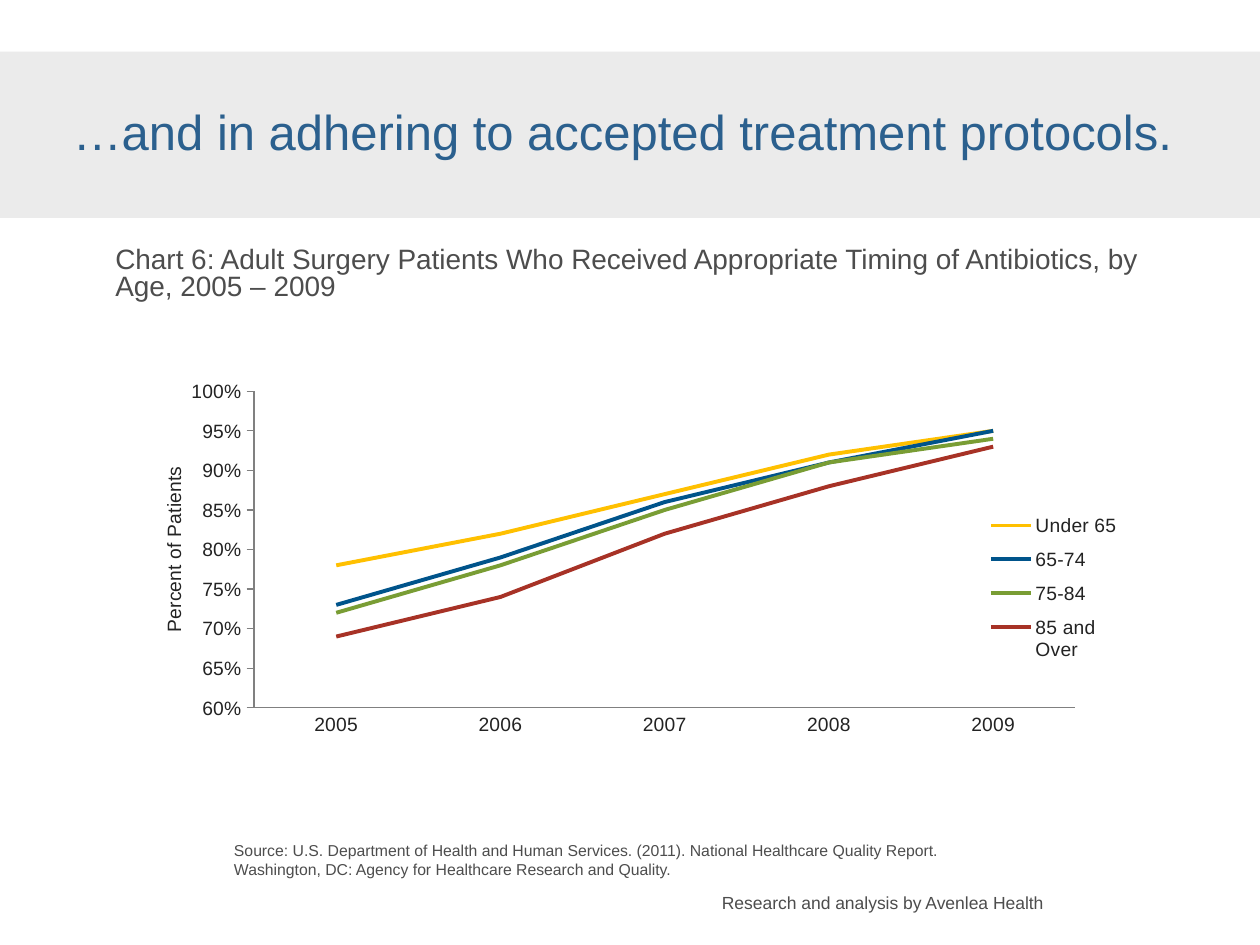
"""Build a slide with a line chart of antibiotic timing by patient age."""
from lxml.etree import SubElement
from pptx import Presentation
from pptx.chart.data import CategoryChartData
from pptx.dml.color import RGBColor
from pptx.enum.chart import XL_CHART_TYPE as ChartType
from pptx.enum.chart import XL_LEGEND_POSITION as LegendPosition
from pptx.enum.chart import XL_TICK_MARK as TickMark
from pptx.enum.shapes import MSO_SHAPE as Shape
from pptx.enum.text import MSO_ANCHOR as Anchor
from pptx.enum.text import PP_ALIGN as Align
from pptx.oxml.ns import qn
from pptx.util import Pt

FONT = "Arial"
BAND = RGBColor(0xEB, 0xEB, 0xEB)
TITLE_BLUE = RGBColor(0x2B, 0x60, 0x8E)
TEXT_GREY = RGBColor(0x4D, 0x4D, 0x4D)
CHART_TEXT = RGBColor(0x23, 0x23, 0x23)
AXIS_GREY = RGBColor(0x80, 0x80, 0x80)
YELLOW = RGBColor(0xFF, 0xC0, 0x00)
BLUE = RGBColor(0x00, 0x54, 0x8B)
GREEN = RGBColor(0x79, 0x9D, 0x34)
RED = RGBColor(0xA7, 0x32, 0x26)

YEARS = ["2005", "2006", "2007", "2008", "2009"]
SHARE_BY_AGE = [
    ("Under 65", YELLOW, [0.78, 0.82, 0.87, 0.92, 0.95]),
    ("65-74", BLUE, [0.73, 0.79, 0.86, 0.91, 0.95]),
    ("75-84", GREEN, [0.72, 0.78, 0.85, 0.91, 0.94]),
    ("85 and Over", RED, [0.69, 0.74, 0.82, 0.88, 0.93]),
]


def set_font(font, size, color):
    """Apply the slide's typeface with a size and colour."""
    font.name = FONT
    font.size = Pt(size)
    font.bold = False
    font.color.rgb = color


def fill_text(shape, text, size, color, line_spacing=1.0):
    """Write one left-aligned paragraph without insets."""
    frame = shape.text_frame
    frame.margin_left = frame.margin_right = 0
    frame.margin_top = frame.margin_bottom = 0
    frame.word_wrap = True
    frame.vertical_anchor = Anchor.TOP
    frame.text = text
    paragraph = frame.paragraphs[0]
    paragraph.alignment = Align.LEFT
    paragraph.line_spacing = line_spacing
    set_font(paragraph.runs[0].font, size, color)


def add_band(slide, top, width, height):
    """Add the grey band behind the title."""
    band = slide.shapes.add_shape(Shape.RECTANGLE, 0, Pt(top), width, Pt(height))
    band.shadow.inherit = False
    band.fill.solid()
    band.fill.fore_color.rgb = BAND
    band.line.fill.background()


def set_title(slide, text):
    """Move and format the title placeholder."""
    title = slide.shapes.title
    title.left, title.top = Pt(41.6), Pt(64.4)
    title.width, title.height = Pt(648), Pt(27.4)
    fill_text(title, text, 28, TITLE_BLUE, 0.8)


def add_text(slide, box, text, size, line_spacing=1.0):
    """Add a grey text box at left, top, width, height."""
    shape = slide.shapes.add_textbox(*map(Pt, box))
    fill_text(shape, text, size, TEXT_GREY, line_spacing)


def place(element, index, **position):
    """Give a chart part a manual layout in fractions of the chart."""
    for layout in element.findall(qn("c:layout")):
        element.remove(layout)
    layout = element.makeelement(qn("c:layout"))
    element.insert(index, layout)
    manual = SubElement(layout, qn("c:manualLayout"))
    settings = {"xMode": "edge", "yMode": "edge", **position}
    for name, value in settings.items():
        SubElement(manual, qn(f"c:{name}")).set("val", str(value))


def format_axis(axis, tick_mark):
    """Style an axis line, its ticks and its labels."""
    axis.has_major_gridlines = False
    axis.major_tick_mark = tick_mark
    axis.minor_tick_mark = TickMark.NONE
    axis.format.line.color.rgb = AXIS_GREY
    axis.format.line.width = Pt(0.75)
    set_font(axis.tick_labels.font, 11, CHART_TEXT)


def format_value_axis(axis):
    """Set the percent scale and the rotated axis title."""
    format_axis(axis, TickMark.OUTSIDE)
    axis.minimum_scale, axis.maximum_scale = 0.6, 1
    axis.major_unit = 0.05
    axis.tick_labels.number_format = "0%"
    axis.tick_labels.number_format_is_linked = False
    frame = axis.axis_title.text_frame
    frame.text = "Percent of Patients"
    set_font(frame.paragraphs[0].runs[0].font, 11, CHART_TEXT)


def add_line_chart(slide, box):
    """Add the line chart with one line per age group."""
    data = CategoryChartData(number_format="0%")
    data.categories = YEARS
    for name, _, shares in SHARE_BY_AGE:
        data.add_series(name, shares)
    chart = slide.shapes.add_chart(ChartType.LINE, *map(Pt, box), data).chart
    set_font(chart.font, 18, CHART_TEXT)
    chart.has_title = False
    plot = chart.plots[0]
    plot.vary_by_categories = False
    for series, (_, color, _) in zip(plot.series, SHARE_BY_AGE):
        series.smooth = False
        series.format.line.color.rgb = color
        series.format.line.width = Pt(2.25)
    format_axis(chart.category_axis, TickMark.NONE)
    format_value_axis(chart.value_axis)
    chart.has_legend = True
    chart.legend.position = LegendPosition.RIGHT
    chart.legend.include_in_layout = False
    set_font(chart.legend.font, 11, CHART_TEXT)
    arrange_chart(chart)


def arrange_chart(chart):
    """Place the plot area, the legend and the value axis title."""
    plot_area = chart.element.xpath("c:chart/c:plotArea")[0]
    legend = chart.element.xpath("c:chart/c:legend")[0]
    axis_title = plot_area.xpath("c:valAx/c:title")[0]
    place(plot_area, 0, x=0.15, y=0.11, w=0.76, h=0.71)
    plot_area.xpath("c:layout/c:manualLayout")[0].insert(
        0, plot_area.makeelement(qn("c:layoutTarget"), {"val": "inner"}))
    place(legend, 1, x=0.82, y=0.36, w=0.14, h=0.38)
    place(axis_title, 1, x=0.06, y=0.27)
    body = axis_title.xpath(".//a:bodyPr")[0]
    body.set("rot", "-5400000")
    body.set("vert", "horz")


def main():
    """Build the slide and save it."""
    presentation = Presentation()
    presentation.slide_width, presentation.slide_height = Pt(720), Pt(540)
    slide = presentation.slides.add_slide(presentation.slide_layouts[5])
    add_band(slide, 29.5, presentation.slide_width, 95)
    slide.shapes._spTree.append(slide.shapes.title.element)
    add_text(slide, (412.5, 509.8, 190, 12),
             "Research and analysis by Avenlea Health", 10)
    set_title(slide, "…and in adhering to accepted treatment protocols.")
    add_text(slide, (133.7, 480.6, 450, 21.6),
             "Source: U.S. Department of Health and Human Services. (2011). "
             "National Healthcare Quality Report. Washington, DC: Agency for "
             "Healthcare Research and Quality.", 9)
    add_text(slide, (65.9, 141.8, 607, 31),
             "Chart 6: Adult Surgery Patients Who Received Appropriate Timing "
             "of Antibiotics, by Age, 2005 – 2009", 16, 0.8)
    add_line_chart(slide, (52.6, 195.6, 617.5, 254.8))
    presentation.save("out.pptx")


if __name__ == "__main__":
    main()
